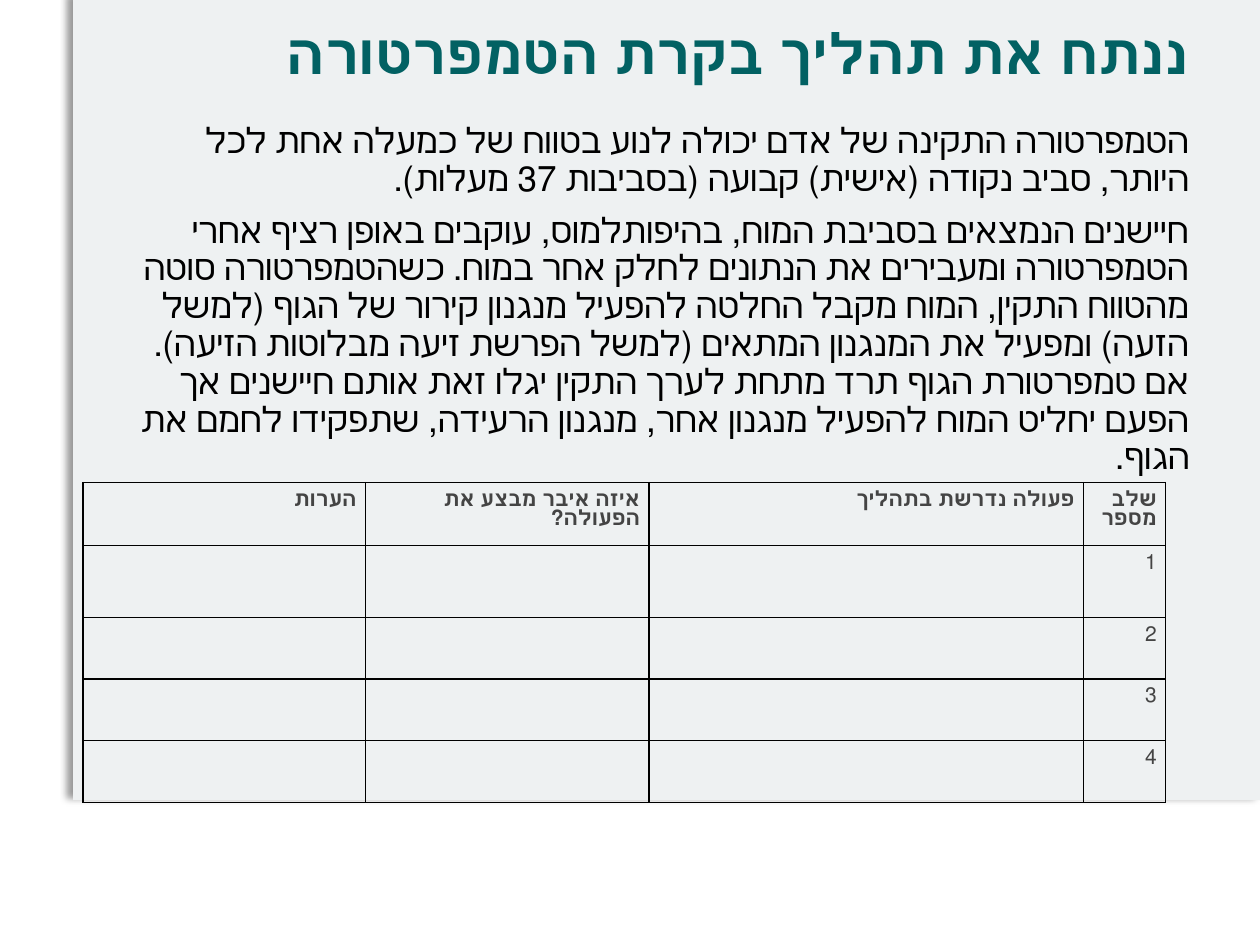
from lxml import etree
from pptx import Presentation
from pptx.dml.color import RGBColor
from pptx.enum.shapes import MSO_SHAPE
from pptx.enum.text import MSO_ANCHOR, PP_ALIGN
from pptx.oxml.ns import qn
from pptx.util import Inches, Pt

RECTANGLE = MSO_SHAPE.RECTANGLE
TOP, MIDDLE = MSO_ANCHOR.TOP, MSO_ANCHOR.MIDDLE
RIGHT = PP_ALIGN.RIGHT

PANEL_BOX = (0.58, -0.03, 9.42, 6.38)
TITLE_BOX = (0.92, -0.16, 8.62, 1.21)
BODY_BOX = (0.92, 0.93, 8.62, 4.34)
TABLE_BOX = (0.66, 3.83, 8.59, 2.42)
COLUMN_WIDTHS = (2.24, 2.25, 3.45, 0.65)
ROW_HEIGHTS = (0.38, 0.57, 0.49, 0.49, 0.49)

TITLE = "ננתח את תהליך בקרת הטמפרטורה"
RANGE_TEXT = (
    "הטמפרטורה התקינה של אדם יכולה לנוע בטווח של כמעלה אחת לכל היותר, "
    "סביב נקודה (אישית) קבועה (בסביבות 37 מעלות)."
)
PROCESS_TEXT = (
    "חיישנים הנמצאים בסביבת המוח, בהיפותלמוס, עוקבים באופן רציף אחרי "
    "הטמפרטורה ומעבירים את הנתונים לחלק אחר במוח. כשהטמפרטורה סוטה מהטווח "
    "התקין, המוח מקבל החלטה להפעיל מנגנון קירור של הגוף (למשל הזעה) ומפעיל "
    "את המנגנון המתאים (למשל הפרשת זיעה מבלוטות הזיעה).\v"
    "אם טמפרטורת הגוף תרד מתחת לערך התקין יגלו זאת אותם חיישנים אך הפעם "
    "יחליט המוח להפעיל מנגנון אחר, מנגנון הרעידה, שתפקידו לחמם את הגוף."
)
HEADERS = ("הערות", "איזה איבר מבצע את הפעולה?", "פעולה נדרשת בתהליך", "שלב מספר")

TITLE_FONT = {"size": Pt(32), "name": "Calibri", "bold": True}
RANGE_FONT = {"size": Pt(20), "name": "Arial", "bold": False}
PROCESS_FONT = {**RANGE_FONT, "name": "Calibri"}
HEADER_FONT = {"size": Pt(12), "name": "Calibri", "bold": True}
NUMBER_FONT = {**HEADER_FONT, "bold": False}


def color(value):
    return RGBColor.from_string(value)


def inches(box):
    return [Inches(length) for length in box]


def set_attributes(target, values):
    for name, value in values.items():
        setattr(target, name, value)


def write_paragraph(paragraph, text, font, font_color, after=0):
    """Fill a right-to-left paragraph."""
    paragraph.text = text
    set_attributes(paragraph, {"alignment": RIGHT, "line_spacing": 0.9,
                               "space_after": Pt(after)})
    paragraph._p.get_or_add_pPr().set("rtl", "1")
    for run in paragraph.runs:
        set_attributes(run.font, font)
        run.font.color.rgb = color(font_color)
        run._r.get_or_add_rPr().set("lang", "he-IL")


def add_panel(slide, box):
    panel = slide.shapes.add_shape(RECTANGLE, *inches(box))
    panel.shadow.inherit = False
    panel.fill.solid()
    panel.fill.fore_color.rgb = color("EEF1F2")
    panel.line.fill.background()
    # Soft shadow towards the left
    effects = panel._element.spPr.find(qn("a:effectLst"))
    shadow = etree.SubElement(effects, qn("a:outerShdw"), blurRad=str(Pt(4)),
                              dist=str(Pt(3)), dir="10800000", rotWithShape="0")
    shade = etree.SubElement(shadow, qn("a:srgbClr"), val="000000")
    etree.SubElement(shade, qn("a:alpha"), val="40000")


def add_text_frame(slide, box, anchor):
    frame = slide.shapes.add_textbox(*inches(box)).text_frame
    set_attributes(frame, {"word_wrap": True, "vertical_anchor": anchor})
    return frame


def add_title(slide, box):
    frame = add_text_frame(slide, box, MIDDLE)
    write_paragraph(frame.paragraphs[0], TITLE, TITLE_FONT, "026163")


def add_body(slide, box):
    frame = add_text_frame(slide, box, TOP)
    write_paragraph(frame.paragraphs[0], RANGE_TEXT, RANGE_FONT, "000000", 8)
    write_paragraph(frame.add_paragraph(), PROCESS_TEXT, PROCESS_FONT, "000000", 8)


def add_borders(cell):
    properties = cell._tc.get_or_add_tcPr()
    for index, side in enumerate(("lnL", "lnR", "lnT", "lnB")):
        line = etree.Element(qn(f"a:{side}"), w=str(Pt(1)))
        fill = etree.SubElement(line, qn("a:solidFill"))
        etree.SubElement(fill, qn("a:srgbClr"), val="000000")
        properties.insert(index, line)


def add_process_table(slide, box):
    row_count, column_count = len(ROW_HEIGHTS), len(COLUMN_WIDTHS)
    table = slide.shapes.add_table(row_count, column_count, *inches(box)).table
    set_attributes(table, {"first_row": False, "horz_banding": False})
    for column, width in zip(table.columns, COLUMN_WIDTHS):
        column.width = Inches(width)
    for row, height in zip(table.rows, ROW_HEIGHTS):
        row.height = Inches(height)
    # Every cell is clear, with the same margins and borders
    margins = {f"margin_{side}": Inches(0.07)
               for side in ("left", "right", "top", "bottom")}
    for cell in table.iter_cells():
        set_attributes(cell, margins)
        cell.fill.background()
        add_borders(cell)
    # Headings across the top, step numbers down the right
    for index, heading in enumerate(HEADERS):
        paragraph = table.cell(0, index).text_frame.paragraphs[0]
        write_paragraph(paragraph, heading, HEADER_FONT, "444444")
    for step in range(1, row_count):
        paragraph = table.cell(step, column_count - 1).text_frame.paragraphs[0]
        write_paragraph(paragraph, str(step), NUMBER_FONT, "444444")


def main():
    presentation = Presentation()
    presentation.slide_width, presentation.slide_height = Inches(10), Inches(7.5)
    slide = presentation.slides.add_slide(presentation.slide_layouts[6])
    add_panel(slide, PANEL_BOX)
    add_body(slide, BODY_BOX)
    add_title(slide, TITLE_BOX)
    add_process_table(slide, TABLE_BOX)
    presentation.save("out.pptx")


if __name__ == "__main__":
    main()
